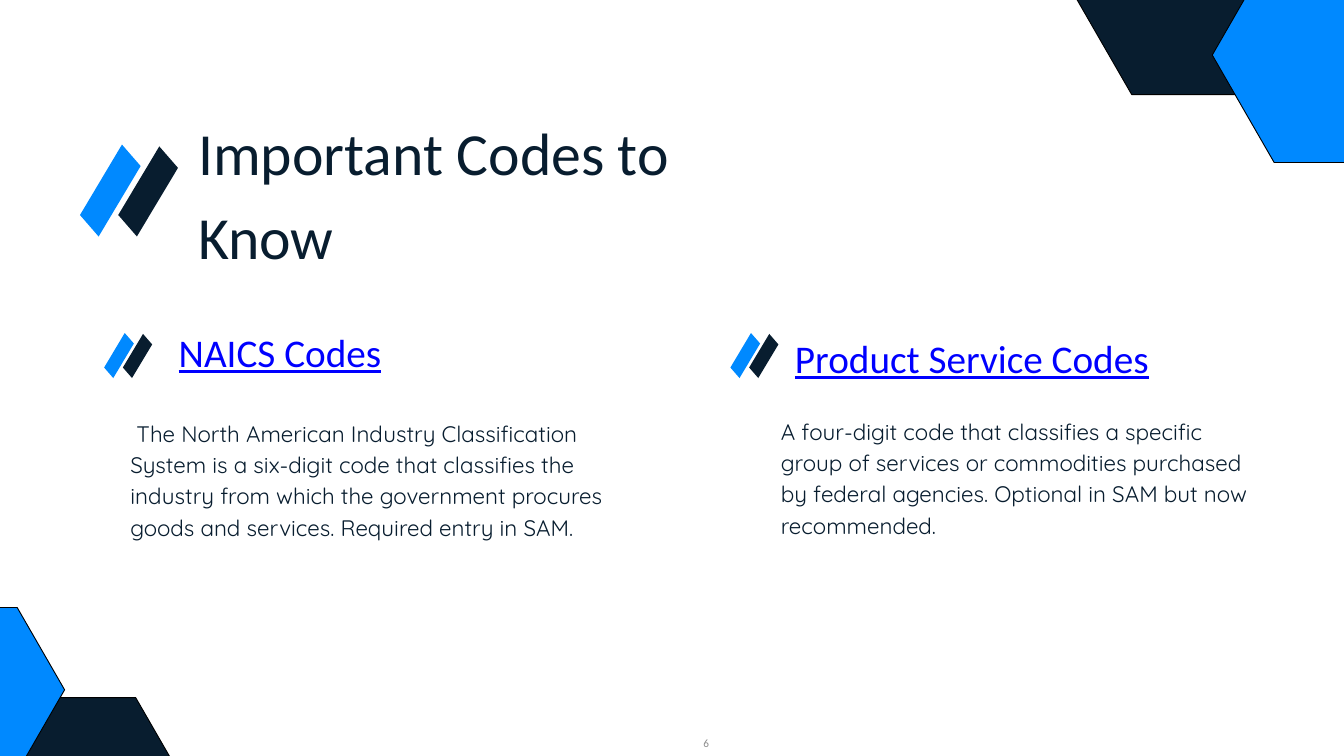
import pptx
import pptx.util
import pptx.dml.color
import pptx.enum.shapes
import pptx.enum.text

Pt = pptx.util.Pt
RGBColor = pptx.dml.color.RGBColor
ALIGN = pptx.enum.text.PP_ALIGN
ANCHOR = pptx.enum.text.MSO_ANCHOR

NAVY = RGBColor(0x08, 0x1D, 0x2F)
BLUE = RGBColor(0x00, 0x89, 0xFF)
LINK = RGBColor(0x00, 0x00, 0xFF)
GREY = RGBColor(0x8C, 0x8C, 0x8C)
BLACK = RGBColor(0, 0, 0)
WHITE = RGBColor(255, 255, 255)

# Content: text with its left, top, width, height
TITLE = ("Important Codes to Know", (212.4, 111.6, 639.4, 174.2))
HEADINGS = [
    ("NAICS Codes", (191.5, 349.2, 444.2, 49.7)),
    ("Product Service Codes", (851.8, 355.7, 532, 49.7)),
]
BODIES = [
    (" The North American Industry Classification System is a six-digit code "
     "that classifies the industry from which the government procures goods "
     "and services. Required entry in SAM.", (139.7, 445, 508.3, 169.2)),
    ("A four-digit code that classifies a specific group of services or "
     "commodities purchased by federal agencies. Optional in SAM but now "
     "recommended.", (836.6, 442.8, 510.5, 134.6)),
]
PAGE_NUMBER = ("6", (599, 781.2, 167.8, 28.8))

# Slanted stripes, measured from the left corner of the blue one
STRIPES = [
    (NAVY, [(41, 0), (85, -73.5), (105, -50.5), (61, 23)]),
    (BLUE, [(0, 0), (45, -75.5), (65, -52.5), (20, 23)]),
]
# Left, top, scale of each pair of stripes
MARKS = [(85.7, 230.4, 1), (111.6, 393.8, 0.49), (782.6, 393.8, 0.49)]

# Corner hexagons, running over the slide edge
HEXAGONS = [
    (NAVY, (1152.7, -106.6, 240.5, 208.1)),
    (BLUE, (1298.9, -56.2, 266.4, 230.4)),
    (NAVY, (7.2, 747.4, 184, 159.1)),
    (BLUE, (-134.6, 650.9, 203.8, 176.4)),
]
HEXAGON_INSET = 0.288


def add_text(page, text, place, *, size, color=NAVY, font="Calibri", spacing=None,
             underline=None, align=ALIGN.LEFT, anchor=ANCHOR.TOP, right_margin=0):
    box = page.shapes.add_textbox(*map(Pt, place))
    frame = box.text_frame
    frame.word_wrap = True
    frame.vertical_anchor = anchor
    frame.margin_left = frame.margin_top = frame.margin_bottom = 0
    frame.margin_right = Pt(right_margin)
    para = frame.paragraphs[0]
    para.alignment = align
    if spacing:
        para.line_spacing = Pt(spacing)
    span = para.add_run()
    span.text = text
    span.font.name = font
    span.font.size = Pt(size)
    span.font.color.rgb = color
    span.font.underline = underline


def paint(shape, color, outlined=False):
    shape.shadow.inherit = False
    shape.fill.solid()
    shape.fill.fore_color.rgb = color
    if outlined:
        shape.line.color.rgb = BLACK
        shape.line.width = Pt(1)
    else:
        shape.line.fill.background()


def add_mark(page, left, top, scale):
    for color, corners in STRIPES:
        points = [(Pt(left + x * scale), Pt(top + y * scale)) for x, y in corners]
        builder = page.shapes.build_freeform(*points[0])
        builder.add_line_segments(points[1:], close=True)
        paint(builder.convert_to_shape(), color)


def add_hexagon(page, color, place):
    hexagon = page.shapes.add_shape(
        pptx.enum.shapes.MSO_SHAPE.HEXAGON, *map(Pt, place))
    hexagon.adjustments[0] = HEXAGON_INSET
    paint(hexagon, color, outlined=True)


def main():
    deck = pptx.Presentation()
    deck.slide_width, deck.slide_height = Pt(1440), Pt(810)
    page = deck.slides.add_slide(deck.slide_layouts[6])
    page.background.fill.solid()
    page.background.fill.fore_color.rgb = WHITE

    # Title, headings and descriptions
    add_text(page, *TITLE, size=64, spacing=89.6)
    for heading in HEADINGS:
        add_text(page, *heading, size=42, color=LINK, spacing=52.9, underline=True)
    for body in BODIES:
        add_text(page, *body, size=24, font="Quicksand", spacing=33.6)

    # Decoration
    for mark in MARKS:
        add_mark(page, *mark)
    for hexagon in HEXAGONS:
        add_hexagon(page, *hexagon)

    # Page number
    add_text(page, *PAGE_NUMBER, size=12, color=GREY, align=ALIGN.RIGHT,
             anchor=ANCHOR.MIDDLE, right_margin=7.2)
    deck.save("out.pptx")


if __name__ == "__main__":
    main()
